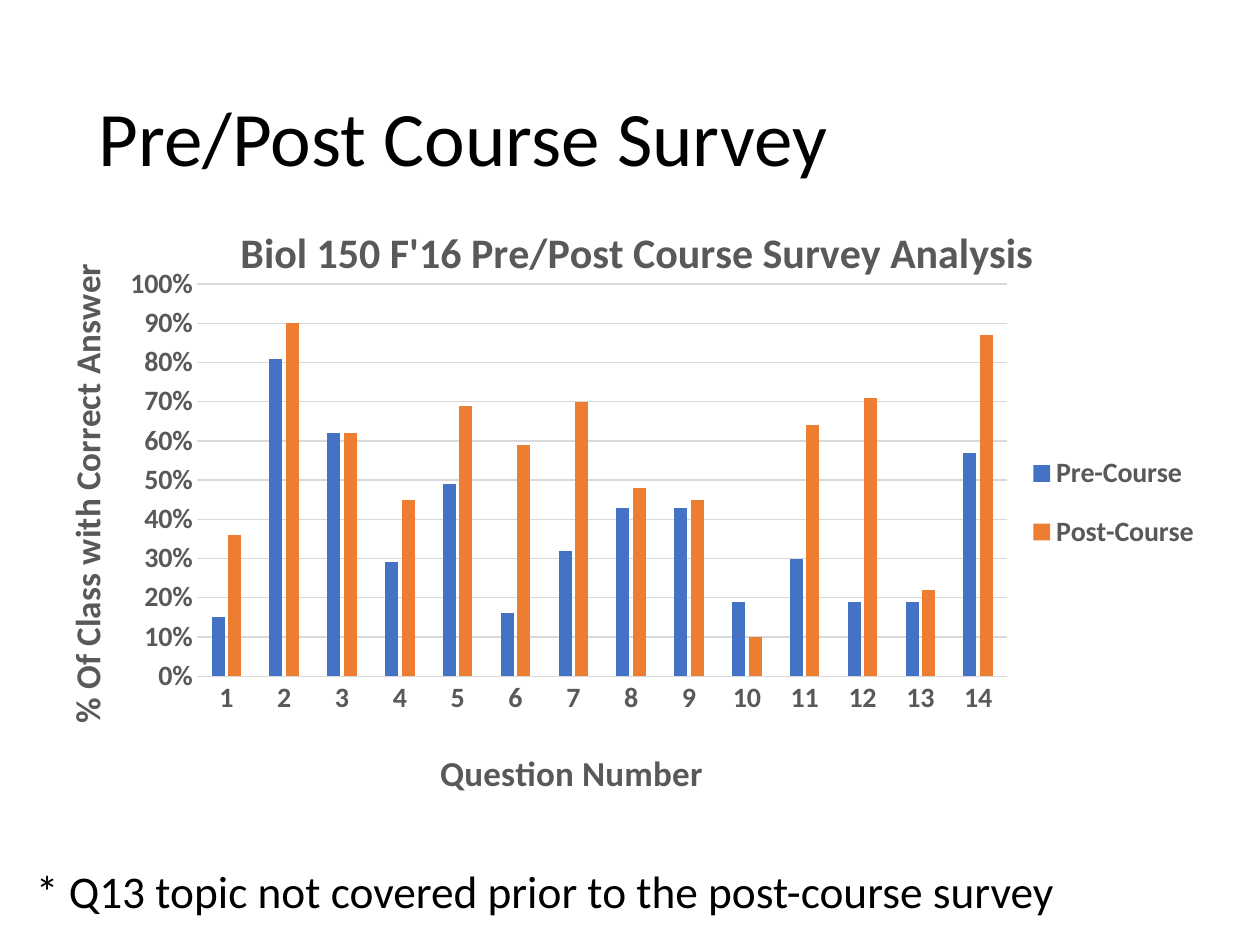
import pptx
import pptx.chart.data
import pptx.dml.color
import pptx.enum.chart
import pptx.enum.text
import pptx.oxml
import pptx.oxml.ns
import pptx.util

Pt = pptx.util.Pt
FACE = "Calibri"
HUES = {"ink": "000000", "gray": "595959", "grid": "D9D9D9",
        "pre": "4472C4", "post": "ED7D31"}
PRE = [.15, .81, .62, .29, .49, .16, .32, .43, .43, .19, .3, .19, .19, .57]
POST = [.36, .9, .62, .45, .69, .59, .7, .48, .45, .1, .64, .71, .22, .87]


def hue(name):
    """Return the named colour."""
    return pptx.dml.color.RGBColor.from_string(HUES[name])


def style(font, size, name="gray", bold=True):
    """Set the face, size, colour and weight of a font."""
    font.name, font.size, font.bold = FACE, Pt(size), bold
    font.color.rgb = hue(name)


def add_text(slide, box, text, size, anchor, before=0):
    """Place one line of text in a box."""
    frame = slide.shapes.add_textbox(*map(Pt, box)).text_frame
    frame.word_wrap = True
    frame.vertical_anchor = anchor
    para = frame.paragraphs[0]
    para.line_spacing = 0.9
    para.space_before = Pt(before)
    run = para.add_run()
    run.text = text
    style(run.font, size, "ink", False)


def set_place(part, after, spots, inner=False):
    """Give a chart part a manual layout, as shares of the chart."""
    qn = pptx.oxml.ns.qn
    for old in part.findall(qn("c:layout")):
        part.remove(old)
    rows = [("layoutTarget", "inner")] if inner else []
    rows += [("xMode", "edge"), ("yMode", "edge"), *zip("xywh", spots)]
    body = "".join(f'<c:{tag} val="{val}"/>' for tag, val in rows)
    node = pptx.oxml.parse_xml(
        f'<c:layout {pptx.oxml.ns.nsdecls("c")}>'
        f'<c:manualLayout>{body}</c:manualLayout></c:layout>')
    if after:
        part.find(qn(after)).addnext(node)
    else:
        part.insert(0, node)


def add_title(title, text, size, spot):
    """Write a chart or axis title at its spot."""
    frame = title.text_frame
    run = frame.paragraphs[0].add_run()
    run.text = text
    style(run.font, size)
    set_place(title._element, "c:tx", spot)
    return frame


def set_axis(axis, line):
    """Style the labels and line of an axis."""
    axis.major_tick_mark = pptx.enum.chart.XL_TICK_MARK.NONE
    axis.minor_tick_mark = pptx.enum.chart.XL_TICK_MARK.NONE
    style(axis.tick_labels.font, 16)
    if line:
        set_line(axis.format.line)
    else:
        axis.format.line.fill.background()


def set_line(line):
    """Draw a thin grid line."""
    line.color.rgb = hue("grid")
    line.width = Pt(0.75)


def add_chart(slide, box):
    """Place the survey column chart in a box."""
    data = pptx.chart.data.CategoryChartData(number_format="0%")
    data.categories = [str(num) for num in range(1, len(PRE) + 1)]
    data.add_series("Pre-Course", PRE)
    data.add_series("Post-Course", POST)
    kind = pptx.enum.chart.XL_CHART_TYPE.COLUMN_CLUSTERED
    chart = slide.shapes.add_chart(kind, *map(Pt, box), data).chart
    style(chart.font, 10, "ink", False)
    add_title(chart.chart_title, "Biol 150 F'16 Pre/Post Course Survey Analysis",
              24, (0.16, 0.04))
    plot = chart.plots[0]
    plot.gap_width, plot.overlap = 219, -27
    plot.vary_by_categories = False
    for series, name in zip(plot.series, ("pre", "post")):
        series.format.fill.solid()
        series.format.fill.fore_color.rgb = hue(name)
    base, side = chart.category_axis, chart.value_axis
    set_axis(base, True)
    set_axis(side, False)
    side.minimum_scale, side.maximum_scale, side.major_unit = 0, 1, 0.1
    side.tick_labels.number_format = "0%"
    side.tick_labels.number_format_is_linked = False
    set_line(side.major_gridlines.format.line)
    add_title(base.axis_title, "Question Number", 20, (0.33, 0.82))
    frame = add_title(side.axis_title, "% Of Class with Correct Answer",
                      20, (0.01, 0.1))
    frame._txBody.bodyPr.set("rot", "-5400000")
    frame._txBody.bodyPr.set("vert", "horz")
    chart.has_legend = True
    chart.legend.position = pptx.enum.chart.XL_LEGEND_POSITION.BOTTOM
    chart.legend.include_in_layout = False
    style(chart.legend.font, 16)
    set_place(chart.legend._element, "c:legendPos", (0.83, 0.36, 0.15, 0.21))
    area = chart._chartSpace.chart.plotArea
    set_place(area, None, (0.13, 0.14, 0.685, 0.583), True)


def main():
    """Build and save the slide."""
    deck = pptx.Presentation()
    deck.slide_width, deck.slide_height = Pt(720), Pt(540)
    slide = deck.slides.add_slide(deck.slide_layouts[6])
    anchor = pptx.enum.text.MSO_ANCHOR
    add_text(slide, (49.5, 28.75, 621, 104.4), "Pre/Post Course Survey",
             44, anchor.MIDDLE)
    add_text(slide, (13.5, 493, 621, 39),
             "* Q13 topic not covered prior to the post-course survey",
             25.9, anchor.TOP, 10)
    add_chart(slide, (25, 108.5, 675.5, 384.5))
    deck.save("out.pptx")


if __name__ == "__main__":
    main()
